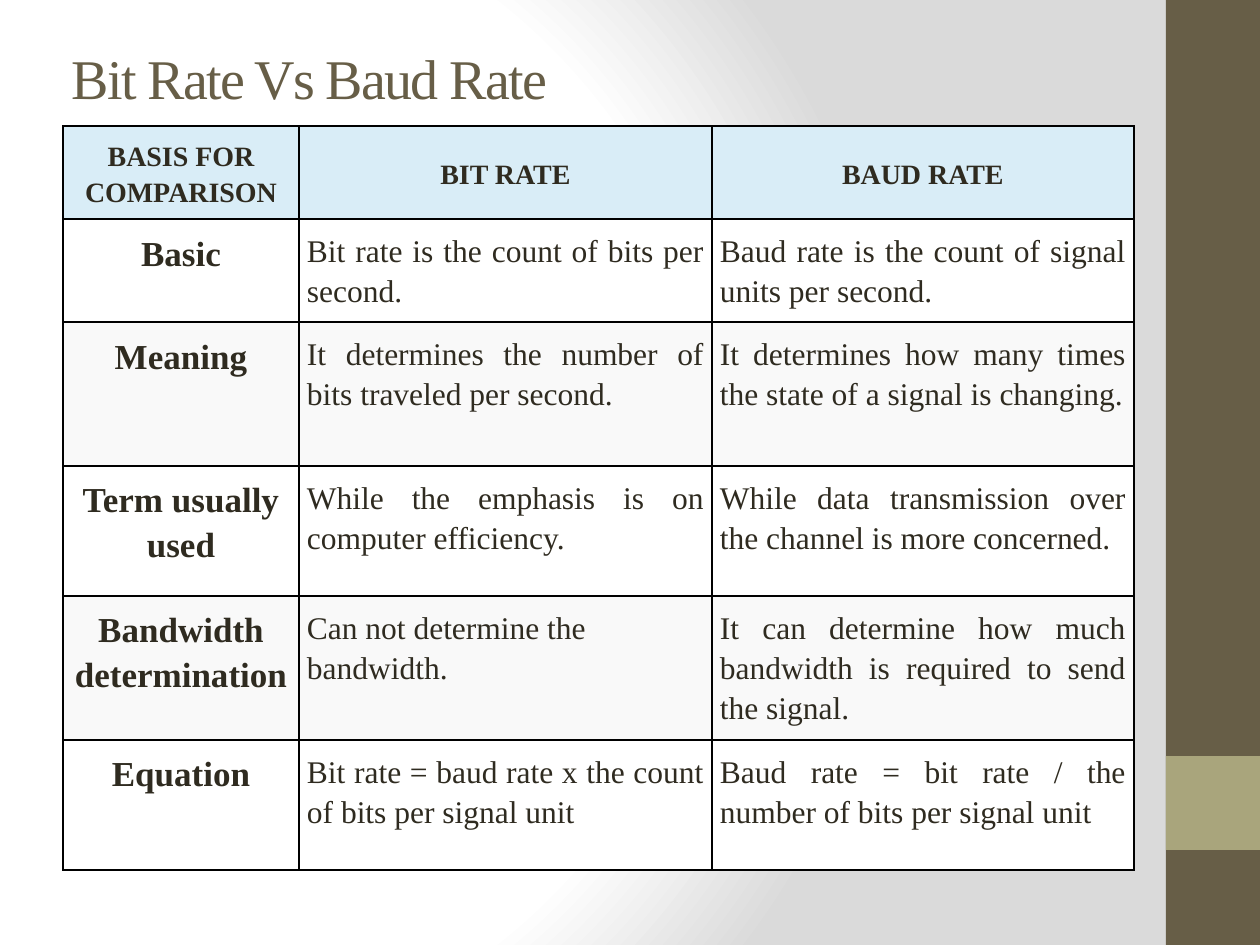
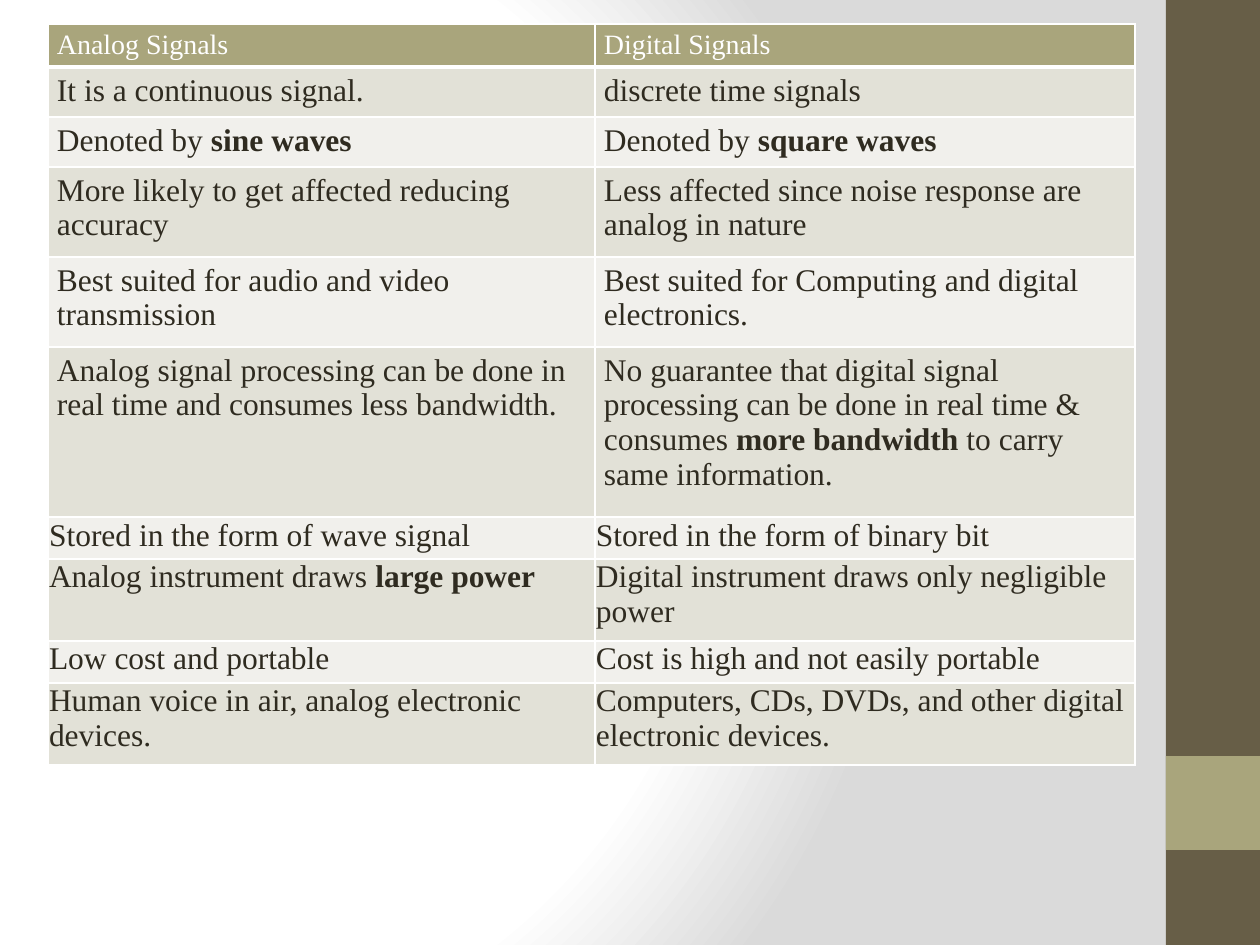
from lxml import etree
from pptx import Presentation
from pptx.dml.color import RGBColor
from pptx.enum.shapes import MSO_SHAPE as Shape
from pptx.enum.text import MSO_ANCHOR as Anchor, MSO_AUTO_SIZE as AutoSize, PP_ALIGN as Align
from pptx.oxml import parse_xml
from pptx.oxml.ns import nsdecls, qn
from pptx.util import Emu, Pt

# Shared look
PX_PER_INCH = 126
FONT = "Times New Roman"
BROWN, OLIVE, INK = "675E47", "A9A57C", "2F2B20"
WHITE, GREY, BLACK = "FFFFFF", "DADADA", "000000"
TITLE_ONLY, BLANK = 5, 6

# Slide 1 content
RATE_HEADER = ("BASIS FOR COMPARISON", "BIT RATE", "BAUD RATE")
RATE_ROWS = [
    ("Basic", "Bit rate is the count of bits per second.",
     "Baud rate is the count of signal units per second."),
    ("Meaning", "It determines the number of bits traveled per second.",
     "It determines how many times the state of a signal is changing."),
    ("Term usually used", "While the emphasis is on computer efficiency.",
     "While data transmission over the channel is more concerned."),
    ("Bandwidth determination", "Can not determine the bandwidth.",
     "It can determine how much bandwidth is required to send the signal."),
    ("Equation", "Bit rate = baud rate x the count of bits per signal unit",
     "Baud rate = bit rate / the number of bits per signal unit"),
]
RATE_HEIGHTS = (93, 103, 144, 130, 144, 130)
LEFT_ALIGNED = (4, 1)  # the one explanation that is not justified

# Slide 2 content; ** encloses bold words
SIGNAL_ROWS = [
    ("Analog Signals", "Digital Signals"),
    ("It is a continuous signal.", "discrete time signals"),
    ("Denoted by **sine waves**", "Denoted by **square waves**"),
    ("More likely to get affected reducing accuracy",
     "Less affected since noise response are analog in nature"),
    ("Best suited for audio and video transmission",
     "Best suited for Computing and digital electronics."),
    ("Analog signal processing can be done in real time and consumes less bandwidth.",
     "No guarantee that digital signal processing can be done in real time & "
     "consumes **more bandwidth** to carry same information."),
    ("Stored in the form of wave signal", "Stored in the form of binary bit"),
    ("Analog instrument draws **large power**",
     "Digital instrument draws only negligible power"),
    ("Low cost and portable", "Cost is high and not easily portable"),
    ("Human voice in air, analog electronic devices.",
     "Computers, CDs, DVDs, and other digital electronic devices."),
]
SIGNAL_HEIGHTS = (43, 50, 50, 90, 90, 170, 42, 82, 42, 82)
FIRST_TIGHT_ROW = 6  # from here on the cells have almost no margin


def px(length):
    return Emu(round(length * 914400 / PX_PER_INCH))


def rgb(value):
    return RGBColor.from_string(value)


def set_margins(holder, across, down):
    holder.margin_left = holder.margin_right = px(across)
    holder.margin_top = holder.margin_bottom = px(down)


def add_run(paragraph, words, size, colour, bold=False):
    run = paragraph.add_run()
    run.text = words
    font = run.font
    font.name, font.size, font.bold = FONT, Pt(size), bold
    font.color.rgb = rgb(colour)
    return run


# Master: background and side band
def set_background(master):
    stops = "".join(f'<a:gs pos="{position}"><a:srgbClr val="{colour}"/></a:gs>'
                    for position, colour in ((0, WHITE), (75000, WHITE), (100000, GREY)))
    common = master.element.find(qn("p:cSld"))
    previous = common.find(qn("p:bg"))
    if previous is not None:
        common.remove(previous)
    common.insert(0, parse_xml(
        f'<p:bg {nsdecls("p", "a")}><p:bgPr><a:gradFill rotWithShape="1">'
        f'<a:gsLst>{stops}</a:gsLst><a:path path="circle">'
        '<a:fillToRect l="20000" t="50000" r="100000" b="50000"/></a:path>'
        '</a:gradFill><a:effectLst/></p:bgPr></p:bg>'))


def add_side_band(slide, master):
    """Draw the band on a slide, then move it to the back of the master."""
    for order, (top, height, colour) in enumerate(((0, 945, BROWN), (756, 94, OLIVE))):
        band = slide.shapes.add_shape(Shape.RECTANGLE, px(1166), px(top), px(94), px(height))
        band.shadow.inherit = False
        band.fill.solid()
        band.fill.fore_color.rgb = rgb(colour)
        band.line.fill.background()
        master.shapes.element.insert(2 + order, band.element)


# Slide parts
def add_title(slide, words):
    title = slide.shapes.title
    title.left, title.top, title.width, title.height = px(63), px(38), px(1050), px(78)
    frame = title.text_frame
    frame.auto_size = AutoSize.NONE
    frame.vertical_anchor = Anchor.BOTTOM
    set_margins(frame, 9, 5)
    heading = frame.paragraphs[0]
    heading.alignment = Align.LEFT
    run = add_run(heading, words, 32, BROWN)
    run.font._element.set("spc", "-100")


def add_grid(slide, left, top, widths, heights):
    table = slide.shapes.add_table(len(heights), len(widths), px(left), px(top),
                                   px(sum(widths)), px(sum(heights))).table
    table.first_row = table.horz_banding = False
    for column, width in zip(table.columns, widths):
        column.width = px(width)
    for row, height in zip(table.rows, heights):
        row.height = px(height)
    return table


def set_borders(cell, colour, bottom=1):
    properties = cell._tc.get_or_add_tcPr()
    for side, points in (("L", 1), ("R", 1), ("T", 1), ("B", bottom)):
        edge = etree.SubElement(properties, qn(f"a:ln{side}"), w=str(Pt(points)))
        fill = etree.SubElement(edge, qn("a:solidFill"))
        etree.SubElement(fill, qn("a:srgbClr"), val=colour)


def fill_cell(cell, words, fill, size, colour=INK, bold=False,
              align=Align.LEFT, spacing=1.0):
    cell.fill.solid()
    cell.fill.fore_color.rgb = rgb(fill)
    paragraph = cell.text_frame.paragraphs[0]
    paragraph.alignment, paragraph.line_spacing = align, spacing
    for index, part in enumerate(words.split("**")):
        if part:
            add_run(paragraph, part, size, colour, bold or index % 2 == 1)


def add_rate_table(slide):
    table = add_grid(slide, 63, 126, (236, 413, 422), RATE_HEIGHTS)
    for r, row in enumerate([RATE_HEADER] + RATE_ROWS):
        for c, words in enumerate(row):
            cell = table.cell(r, c)
            set_margins(cell, 8, 10)
            set_borders(cell, BLACK)
            if r == 0:
                cell.vertical_anchor = Anchor.MIDDLE
                fill, size = "D9EDF7", 16
            else:
                fill = WHITE if r % 2 else "F9F9F9"
                size = 18 if c else 20
            label = r == 0 or c == 0
            if label:
                align = Align.CENTER
            else:
                align = Align.LEFT if (r, c) == LEFT_ALIGNED else Align.JUSTIFY
            fill_cell(cell, words, fill, size, bold=label, align=align, spacing=1.15)


def add_signal_table(slide):
    table = add_grid(slide, 48, 24, (547, 540), SIGNAL_HEIGHTS)
    for r, row in enumerate(SIGNAL_ROWS):
        for c, words in enumerate(row):
            cell = table.cell(r, c)
            set_margins(cell, *((9, 6) if r < FIRST_TIGHT_ROW else (1, 1)))
            set_borders(cell, WHITE, bottom=1 if r else 3)
            if r == 0:
                fill_cell(cell, words, OLIVE, 16, WHITE)
            else:
                fill_cell(cell, words, "E2E1D7" if r % 2 else "F1F0EC", 18)


def main():
    deck = Presentation()
    deck.slide_width, deck.slide_height = px(1260), px(945)
    master = deck.slide_master
    set_background(master)

    # Slide 1: bit rate against baud rate
    rates = deck.slides.add_slide(deck.slide_layouts[TITLE_ONLY])
    add_side_band(rates, master)
    add_title(rates, "Bit Rate Vs Baud Rate")
    add_rate_table(rates)

    # Slide 2: analog against digital signals
    signals = deck.slides.add_slide(deck.slide_layouts[BLANK])
    add_signal_table(signals)

    deck.save("out.pptx")


if __name__ == "__main__":
    main()
